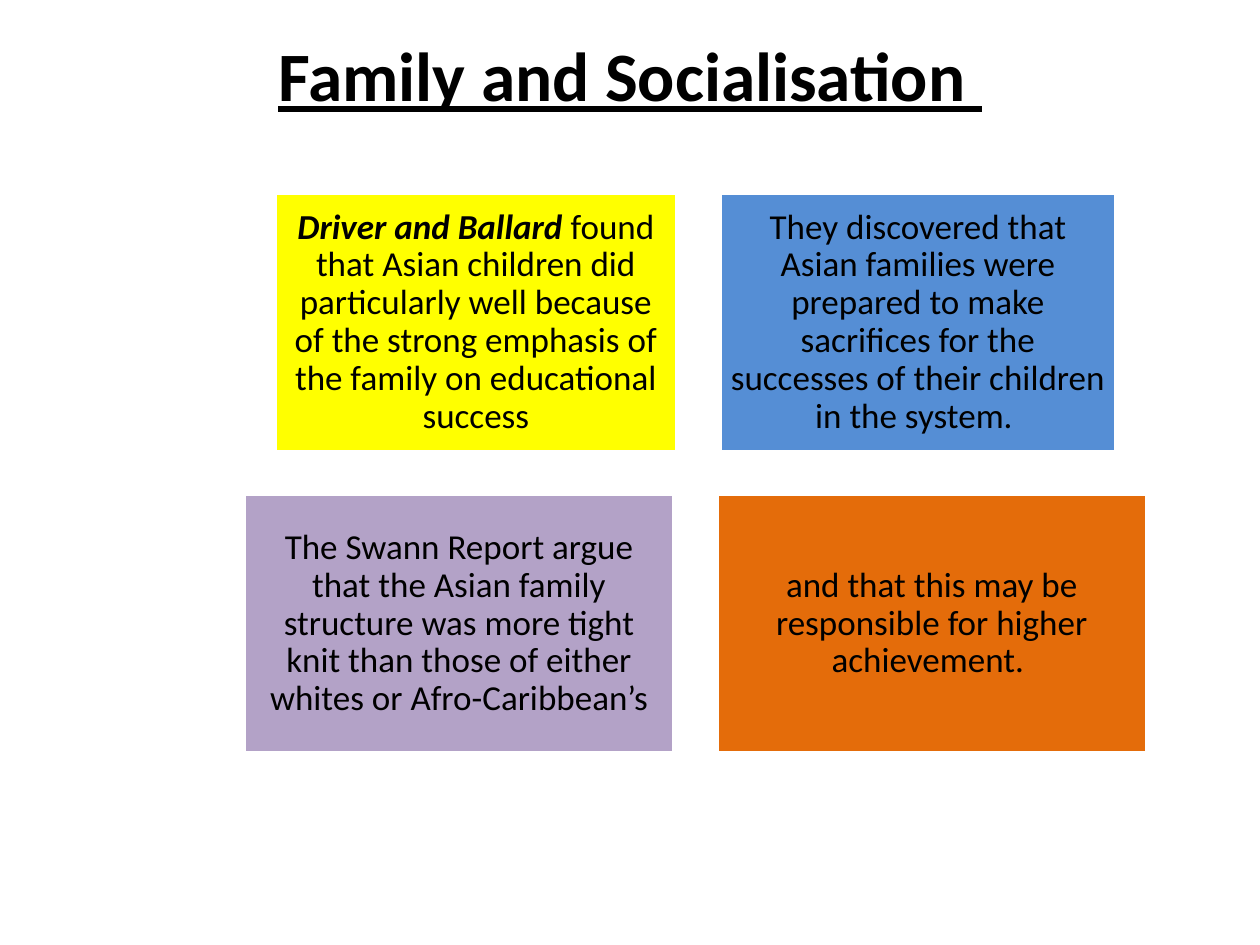
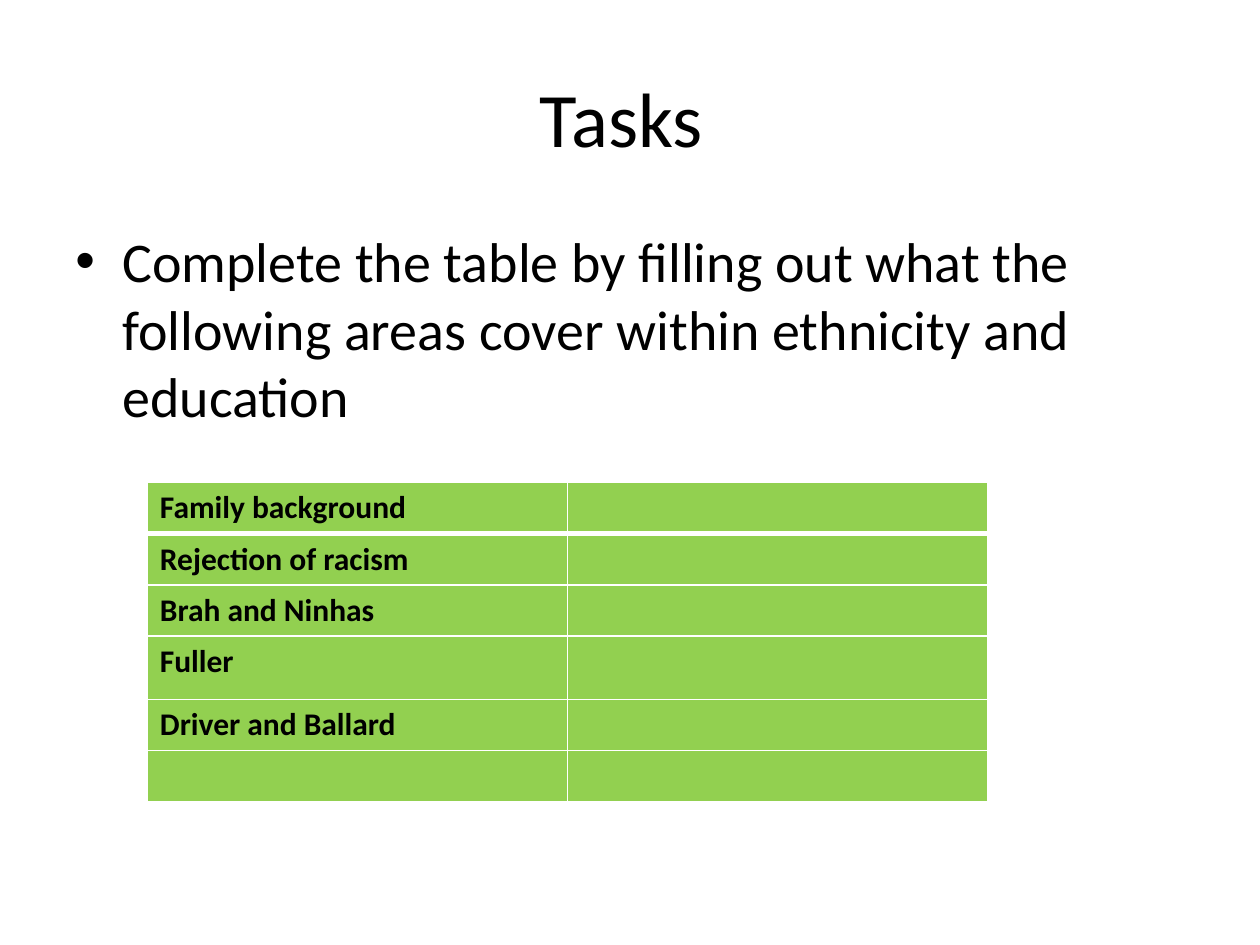
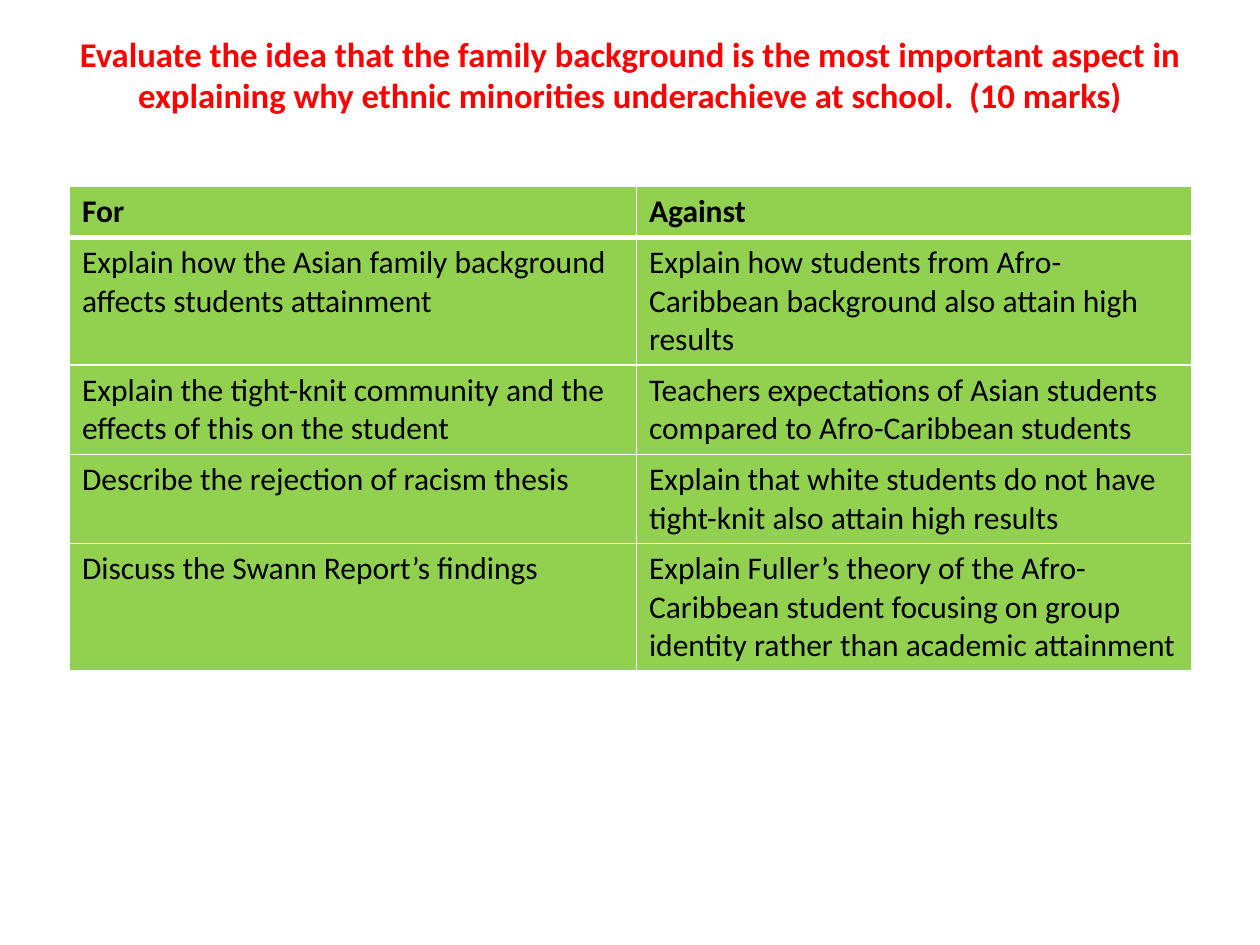
"""Build three slides on ethnicity, family background and education."""

import dataclasses
import typing

import lxml.etree
import pptx
import pptx.dml.color
import pptx.enum.shapes
import pptx.enum.text
import pptx.oxml.ns
import pptx.util

Cm = pptx.util.Cm
Pt = pptx.util.Pt
ANCHOR = pptx.enum.text.MSO_ANCHOR
ALIGN = pptx.enum.text.PP_ALIGN

FONT = "Calibri"
BLACK, WHITE, RED = "000000", "FFFFFF", "FF0000"
GREEN, YELLOW, BLUE, LILAC, ORANGE = "92D050", "FFFF00", "558ED5", "B3A2C7", "E46C0A"

CARD_CENTRE, CARD_TOP, CARD_HEIGHT, CARD_GAP = 14.02, 3.89, 5.21, 0.87
CARD_FRAME = dict(
    word_wrap=True,
    vertical_anchor=ANCHOR.MIDDLE,
    margin_left=Cm(0.2),
    margin_right=Cm(0.2),
    margin_top=Cm(0.2),
    margin_bottom=Cm(0.2),
)
HIGH_TITLE = dict(word_wrap=True, vertical_anchor=ANCHOR.TOP, margin_top=0)
MIDDLE_TITLE = dict(word_wrap=True, vertical_anchor=ANCHOR.MIDDLE)


@dataclasses.dataclass(frozen=True)
class Span:
    """A stretch of text with one format."""

    text: str
    size: float = 18
    color: str = BLACK
    style: dict = dataclasses.field(default_factory=dict)


@dataclasses.dataclass(frozen=True)
class Card:
    """A coloured rectangle holding one statement, its width in centimetres."""

    width: float
    color: str
    spans: list[Span]


@dataclasses.dataclass(frozen=True)
class Grid:
    """A two-column table, its lengths in centimetres."""

    left: float
    top: float
    columns: list[float]
    heights: list[float]
    rows: list[tuple[str, str]]
    bold_rows: int


CARD_ROWS = [
    [
        Card(8.1, YELLOW, [
            Span("Driver and Ballard", 20, style=dict(bold=True, italic=True)),
            Span(" found that Asian children did particularly well because of the "
                 "strong emphasis of the family on educational success", 20),
        ]),
        Card(7.98, BLUE, [
            Span("They discovered that Asian families were prepared to make sacrifices "
                 "for the successes of their children in the system. ", 20),
        ]),
    ],
    [
        Card(8.66, LILAC, [
            Span("The Swann Report argue that the Asian family structure was more tight "
                 "knit than those of either whites or Afro-Caribbean’s", 20),
        ]),
        Card(8.66, ORANGE, [
            Span("and that this may be responsible for higher achievement. ", 20),
        ]),
    ],
]

TASK_GRID = Grid(
    2.97, 9.73, [8.47, 8.47], [1.03, 1.03, 1.03, 1.28, 1.03, 1.03],
    [
        ("Family background", ""),
        ("Rejection of racism", ""),
        ("Brah and Ninhas", ""),
        ("Fuller", ""),
        ("Driver and Ballard", ""),
        ("", ""),
    ],
    bold_rows=6,
)

ESSAY_GRID = Grid(
    1.4, 3.76, [11.43, 11.2], [1.03, 2.57, 1.8, 1.8, 2.57],
    [
        ("For", "Against"),
        ("Explain how the Asian family background affects students attainment",
         "Explain how students from Afro-Caribbean background also attain high results"),
        ("Explain the tight-knit community and the effects of this on the student",
         "Teachers expectations of Asian students compared to Afro-Caribbean students"),
        ("Describe the rejection of racism thesis",
         "Explain that white students do not have tight-knit also attain high results"),
        ("Discuss the Swann Report’s findings",
         "Explain Fuller’s theory of the Afro-Caribbean student focusing on group "
         "identity rather than academic attainment"),
    ],
    bold_rows=1,
)


def assign(target: typing.Any, values: dict) -> None:
    """Set each named attribute of the target."""
    for name, value in values.items():
        setattr(target, name, value)


def rgb(color: str) -> pptx.dml.color.RGBColor:
    """Turn a hex string into a colour."""
    return pptx.dml.color.RGBColor.from_string(color)


def fill_solid(target: typing.Any, color: str) -> None:
    """Give a shape or cell a solid fill."""
    target.fill.solid()
    target.fill.fore_color.rgb = rgb(color)


def write(para: typing.Any, spans: list[Span], **layout: typing.Any) -> None:
    """Write formatted spans into a paragraph."""
    assign(para, layout)
    for span in spans:
        run = para.add_run()
        run.text = span.text
        assign(run.font, dict(name=FONT, size=Pt(span.size)) | span.style)
        run.font.color.rgb = rgb(span.color)


def add_text(page: typing.Any, top: float, height: float, frame: dict) -> typing.Any:
    """Add a full-width text box and return its first paragraph."""
    box = page.shapes.add_textbox(Cm(1.27), Cm(top), Cm(22.86), Cm(height))
    assign(box.text_frame, frame)
    return box.text_frame.paragraphs[0]


def add_title(page: typing.Any, span: Span, top: float, frame: dict) -> None:
    """Add the centred slide title."""
    write(add_text(page, top, 3.18, frame), [span], alignment=ALIGN.CENTER)


def add_card(page: typing.Any, card: Card, left: float, top: float) -> None:
    """Draw one statement card."""
    box = page.shapes.add_shape(
        pptx.enum.shapes.MSO_SHAPE.RECTANGLE,
        Cm(left), Cm(top), Cm(card.width), Cm(CARD_HEIGHT),
    )
    box.shadow.inherit = False
    fill_solid(box, card.color)
    box.line.color.rgb = rgb(WHITE)
    box.line.width = Pt(2)
    assign(box.text_frame, CARD_FRAME)
    write(box.text_frame.paragraphs[0], card.spans, alignment=ALIGN.CENTER, line_spacing=0.9)


def add_card_rows(page: typing.Any, rows: list[list[Card]]) -> None:
    """Draw rows of cards around a shared centre line."""
    for index, cards in enumerate(rows):
        total = sum(card.width for card in cards) + CARD_GAP * (len(cards) - 1)
        left = CARD_CENTRE - total / 2
        for card in cards:
            add_card(page, card, left, CARD_TOP + index * (CARD_HEIGHT + CARD_GAP))
            left += card.width + CARD_GAP


def set_borders(cell: typing.Any, widths: dict[str, float]) -> None:
    """Put white borders ahead of the fill of a cell."""
    properties = cell._tc.get_or_add_tcPr()
    qn = pptx.oxml.ns.qn
    for position, (side, width) in enumerate(widths.items()):
        line = lxml.etree.Element(qn(f"a:{side}"), w=str(Pt(width)))
        solid = lxml.etree.SubElement(line, qn("a:solidFill"))
        lxml.etree.SubElement(solid, qn("a:srgbClr"), val=WHITE)
        properties.insert(position, line)


def add_grid(page: typing.Any, grid: Grid) -> None:
    """Draw a green table with a heavy rule below its first row."""
    table = page.shapes.add_table(
        len(grid.rows), len(grid.columns), Cm(grid.left), Cm(grid.top),
        Cm(sum(grid.columns)), Cm(sum(grid.heights)),
    ).table
    assign(table, dict(first_row=False, horz_banding=False))
    for column, width in zip(table.columns, grid.columns):
        column.width = Cm(width)
    for index, (row, height, texts) in enumerate(zip(table.rows, grid.heights, grid.rows)):
        row.height = Cm(height)
        style = dict(bold=index < grid.bold_rows)
        widths = dict(lnL=1, lnR=1, lnT=3 if index == 1 else 1, lnB=3 if index == 0 else 1)
        for cell, text in zip(row.cells, texts):
            fill_solid(cell, GREEN)
            set_borders(cell, widths)
            if text:
                write(cell.text_frame.paragraphs[0], [Span(text, style=style)])


def add_bullet(page: typing.Any, span: Span) -> None:
    """Add a bulleted body paragraph with a hanging indent."""
    para = add_text(page, 4.45, 12.57, dict(word_wrap=True))
    write(para, [span])
    properties = para._p.get_or_add_pPr()
    properties.set("marL", str(Cm(0.95)))
    properties.set("indent", str(-Cm(0.95)))
    qn = pptx.oxml.ns.qn
    lxml.etree.SubElement(properties, qn("a:buFont"), typeface="Arial")
    lxml.etree.SubElement(properties, qn("a:buChar"), char="•")


def main() -> None:
    """Build and save the deck."""
    deck = pptx.Presentation()
    assign(deck, dict(slide_width=Cm(25.4), slide_height=Cm(19.05)))
    family, tasks, essay = (deck.slides.add_slide(deck.slide_layouts[6]) for _ in range(3))

    heading = Span("Family and Socialisation ", 39.6, style=dict(bold=True, underline=True))
    add_title(family, heading, 0.66, HIGH_TITLE)
    add_card_rows(family, CARD_ROWS)

    add_title(tasks, Span("Tasks ", 44), 0.76, MIDDLE_TITLE)
    add_bullet(tasks, Span("Complete the table by filling out what the following areas "
                           "cover within ethnicity and education", 32))
    add_grid(tasks, TASK_GRID)

    question = Span("Evaluate the idea that the family background is the most important "
                    "aspect in explaining why ethnic minorities underachieve at school.  "
                    "(10 marks)", 19.8, RED, dict(bold=True))
    add_title(essay, question, 0.66, HIGH_TITLE)
    add_grid(essay, ESSAY_GRID)

    deck.save("out.pptx")


if __name__ == "__main__":
    main()
